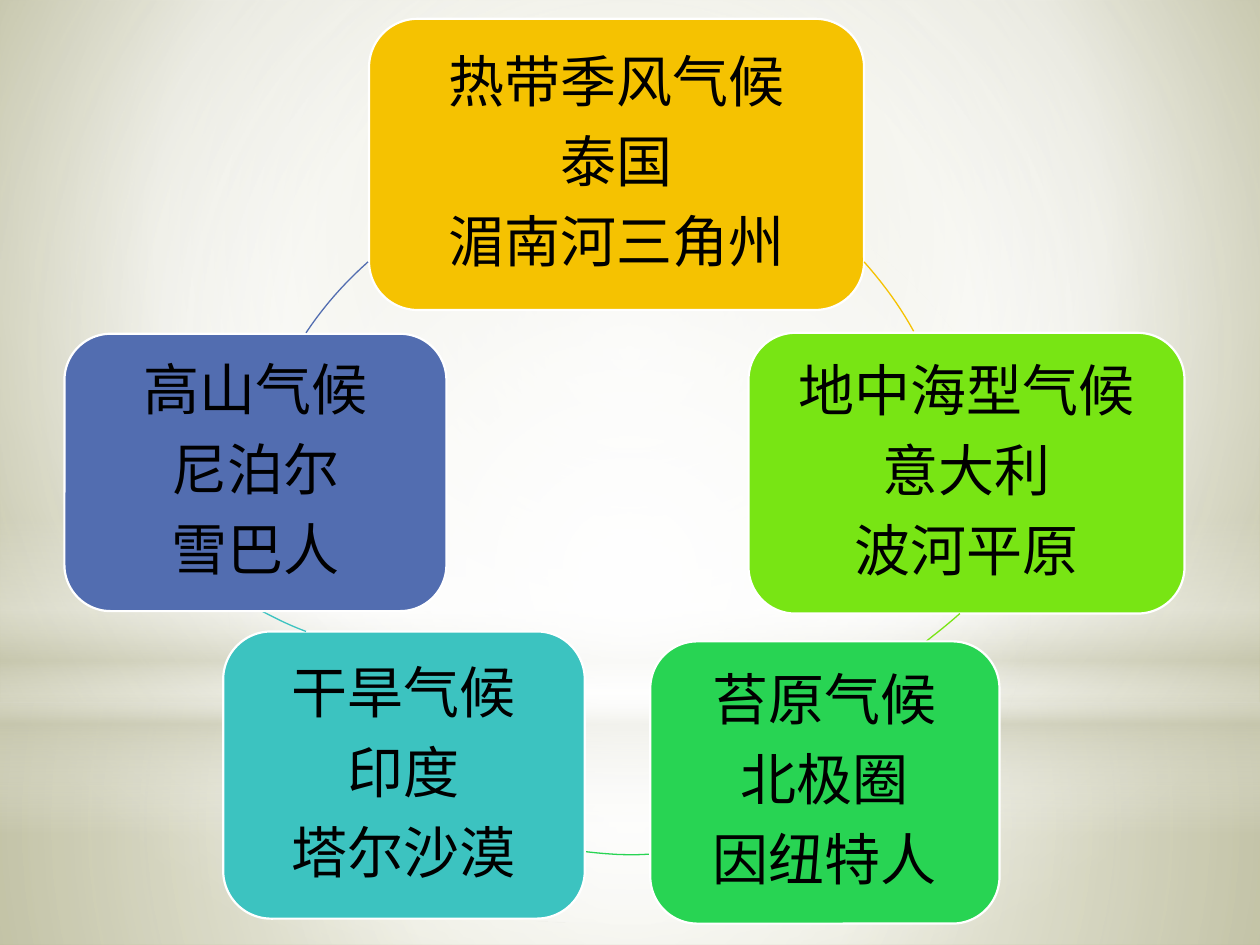
from lxml.etree import SubElement
from pptx import Presentation
from pptx.dml.color import RGBColor
from pptx.enum.shapes import MSO_SHAPE
from pptx.enum.text import MSO_ANCHOR, PP_ALIGN
from pptx.oxml.ns import qn
from pptx.util import Cm, Pt

WHITE = RGBColor(0xFF, 0xFF, 0xFF)
BLACK = RGBColor(0x00, 0x00, 0x00)
SAND = RGBColor(0xC8, 0xC8, 0xB1)
KHAKI = RGBColor(0xC7, 0xC7, 0xA5)
IVORY = RGBColor(0xFB, 0xFB, 0xF9)
OLIVE = RGBColor(0xB1, 0xB1, 0x80)
AMBER = RGBColor(0xF5, 0xC2, 0x01)
LIME = RGBColor(0x78, 0xE5, 0x14)
GREEN = RGBColor(0x28, 0xD4, 0x53)
TEAL = RGBColor(0x3C, 0xC3, 0xC0)
BLUE = RGBColor(0x52, 0x6D, 0xB0)

CENTRE = (50, 50, 50, 50)
CURVE_STEPS = 10

BACKDROP_STOPS = [(0, KHAKI, 100), (60, IVORY, 100), (100, OLIVE, 100)]

GLOWS = [
    (MSO_SHAPE.RECTANGLE, (0, 14.17, 25.4, 4.88),
     [(0, WHITE, 91), (37, WHITE, 76), (100, SAND, 79)], CENTRE),
    (MSO_SHAPE.RECTANGLE, (0, 0, 25.4, 14.17),
     [(0, WHITE, 89), (48, WHITE, 62), (100, SAND, 79)], CENTRE),
    (MSO_SHAPE.RECTANGLE, (0, 10.46, 25.4, 6.35),
     [(0, WHITE, 0), (29, WHITE, 30), (45, SAND, 40),
      (55, WHITE, 26), (65, SAND, 60), (100, WHITE, 0)], None),
    (MSO_SHAPE.OVAL, (0, 4.45, 25.4, 14.17),
     [(0, WHITE, 100), (56, WHITE, 0)], CENTRE),
]

CLIMATES = [
    (AMBER, (7.44, 0.38, 9.98, 5.87), ("热带季风气候", "泰国", "湄南河三角州"),
     ((17.42, 5.28), (17.81, 5.72), (18.14, 6.17), (18.42, 6.68))),
    (LIME, (15.09, 6.71, 8.79, 5.66), ("地中海型气候", "意大利", "波河平原"),
     ((19.35, 12.37), (19.15, 12.55), (18.9, 12.75), (18.67, 12.93))),
    (GREEN, (13.11, 12.93, 7.04, 5.69), ("苔原气候", "北极圈", "因纽特人"),
     ((13.08, 17.22), (12.65, 17.25), (12.24, 17.22), (11.81, 17.17))),
    (TEAL, (4.5, 12.73, 7.29, 5.79), ("干旱气候", "印度", "塔尔沙漠"),
     ((6.17, 12.73), (5.87, 12.62), (5.56, 12.47), (5.28, 12.32))),
    (BLUE, (1.3, 6.73, 7.7, 5.59), ("高山气候", "尼泊尔", "雪巴人"),
     ((6.17, 6.71), (6.53, 6.17), (6.93, 5.72), (7.42, 5.28))),
]


def set_gradient(fill, owner, stops, focus):
    fill.gradient()
    gradient = owner.find(".//" + qn("a:gradFill"))
    for child in list(gradient):
        gradient.remove(child)
    stop_list = SubElement(gradient, qn("a:gsLst"))
    for position, color, opacity in stops:
        stop = SubElement(stop_list, qn("a:gs"), pos=str(position * 1000))
        tint = SubElement(stop, qn("a:srgbClr"), val=str(color))
        if opacity < 100:
            SubElement(tint, qn("a:alpha"), val=str(opacity * 1000))
    if focus is None:
        SubElement(gradient, qn("a:lin"), ang="5400000", scaled="0")
    else:
        radial = SubElement(gradient, qn("a:path"), path="circle")
        edges = {side: str(inset * 1000) for side, inset in zip("ltrb", focus)}
        SubElement(radial, qn("a:fillToRect"), **edges)


def add_glow(slide, outline, place, stops, focus):
    glow = slide.shapes.add_shape(outline, *map(Cm, place))
    glow.shadow.inherit = False
    glow.line.fill.background()
    set_gradient(glow.fill, glow._element.spPr, stops, focus)


def add_climate(slide, color, place, lines):
    card = slide.shapes.add_shape(MSO_SHAPE.ROUNDED_RECTANGLE, *map(Cm, place))
    card.shadow.inherit = False
    card.fill.solid()
    card.fill.fore_color.rgb = color
    card.line.color.rgb = WHITE
    card.line.width = Pt(1.25)
    frame = card.text_frame
    frame.word_wrap = True
    frame.vertical_anchor = MSO_ANCHOR.MIDDLE
    frame.margin_left = frame.margin_right = Cm(0.33)
    frame.margin_top = frame.margin_bottom = Cm(0.33)
    frame.text = "\n".join(lines)
    for paragraph in frame.paragraphs:
        paragraph.alignment = PP_ALIGN.CENTER
        paragraph.line_spacing = 0.9
        paragraph.space_after = Pt(11.2)
        paragraph.font.name = "Cabin"
        paragraph.font.size = Pt(32)
        paragraph.font.color.rgb = BLACK


def curve_point(controls, t):
    weights = ((1 - t) ** 3, 3 * t * (1 - t) ** 2, 3 * t ** 2 * (1 - t), t ** 3)
    return tuple(Cm(sum(w * c for w, c in zip(weights, axis)))
                 for axis in zip(*controls))


def add_arc(slide, color, controls):
    points = [curve_point(controls, step / CURVE_STEPS)
              for step in range(CURVE_STEPS + 1)]
    builder = slide.shapes.build_freeform(*points[0])
    builder.add_line_segments(points[1:], close=False)
    arc = builder.convert_to_shape()
    arc.shadow.inherit = False
    arc.fill.background()
    arc.line.color.rgb = color
    arc.line.width = Pt(0.75)


def main():
    deck = Presentation()
    deck.slide_width, deck.slide_height = Cm(25.4), Cm(19.05)
    slide = deck.slides.add_slide(deck.slide_layouts[6])
    set_gradient(slide.background.fill, slide._element,
                 BACKDROP_STOPS, (20, 10, 20, 60))
    for glow in GLOWS:
        add_glow(slide, *glow)
    for color, place, lines, arc in CLIMATES:
        add_climate(slide, color, place, lines)
        add_arc(slide, color, arc)
    deck.save("out.pptx")


if __name__ == "__main__":
    main()
